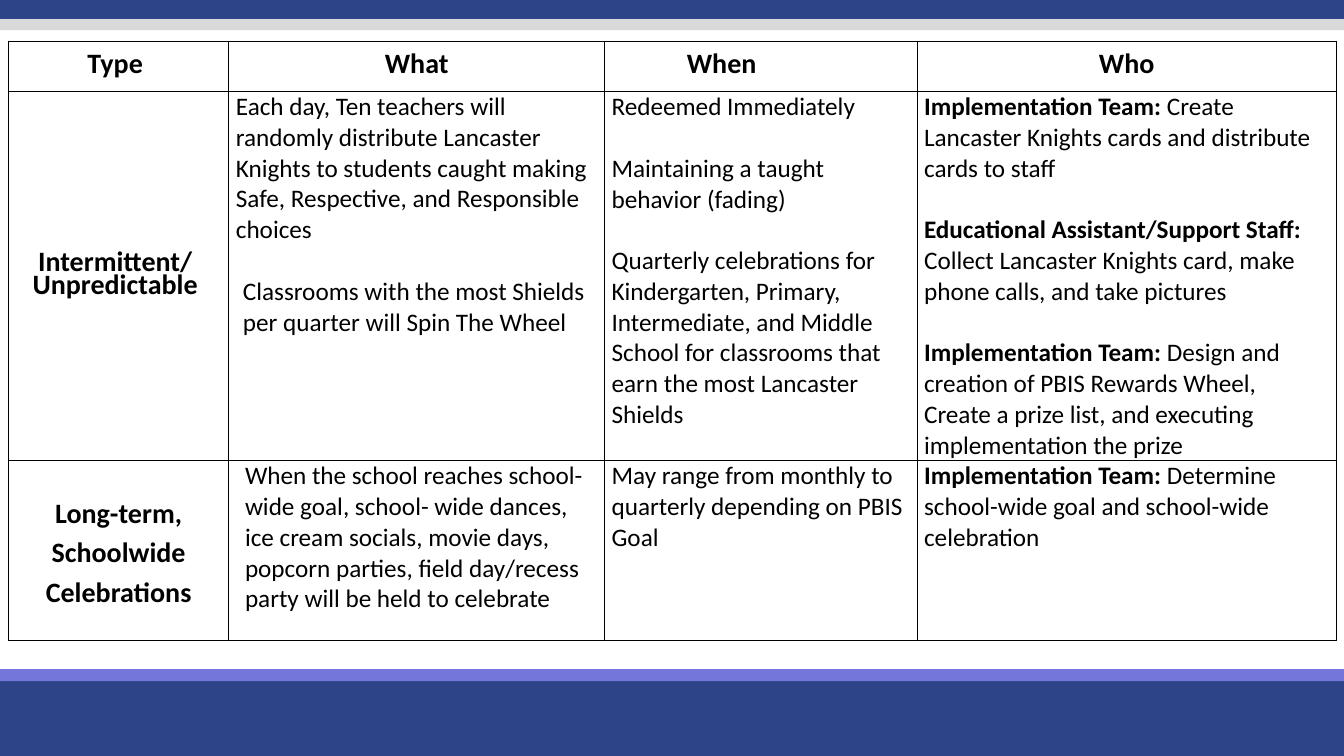
from lxml import etree
from pptx import Presentation
from pptx.dml.color import RGBColor
from pptx.enum.shapes import MSO_SHAPE
from pptx.enum.text import MSO_ANCHOR, PP_ALIGN
from pptx.oxml.ns import qn
from pptx.util import Pt

RECTANGLE = MSO_SHAPE.RECTANGLE
MIDDLE, TOP = MSO_ANCHOR.MIDDLE, MSO_ANCHOR.TOP
CENTER, LEFT = PP_ALIGN.CENTER, PP_ALIGN.LEFT
NAVY = RGBColor(0x2E, 0x44, 0x88)
VIOLET = RGBColor(0x74, 0x76, 0xDA)
GRAY = RGBColor(0xD9, 0xD9, 0xD9)
WHITE = RGBColor(0xFF, 0xFF, 0xFF)
BLACK = RGBColor(0, 0, 0)
FONT = "Calibri"
SLIDE_WIDTH, SLIDE_HEIGHT = 960, 540

BANDS = [(482.4, 57.6, NAVY), (478, 8.6, VIOLET), (-2.2, 15.9, NAVY), (13.7, 7.9, GRAY)]

TABLE_LEFT, TABLE_TOP = 6, 29.5
COLUMN_WIDTHS = [157.5, 268.4, 223.2, 299.4]
ROW_HEIGHTS = [36, 260, 128.2]
LINE_GAP = 22

# Heading cells: lines, left indent, right margin, line spacing
HEADINGS = {
    (0, 0): (["Type"], 0, 5, 0.66),
    (0, 1): (["What"], 5, 5, 0.66),
    (0, 2): (["When"], 0, 56, 0.66),
    (0, 3): (["Who"], 60, 60, 0.66),
    (1, 0): (["Intermittent/ Unpredictable"], 0, 5, 0.67),
    (2, 0): (["Long-term,", "Schoolwide", "Celebrations"], 12, 12, 1.15),
}

# Body cells: paragraphs of left indent, bold label, plain text
BODY = {
    (1, 1): [
        (5, "", "Each day, Ten teachers will randomly distribute Lancaster Knights to students "
                "caught making Safe, Respective, and Responsible choices"),
        (10, "", "Classrooms with the most Shields per quarter will Spin The Wheel"),
    ],
    (1, 2): [
        (5, "", "Redeemed Immediately"),
        (5, "", "Maintaining a taught behavior (fading)"),
        (5, "", "Quarterly celebrations for Kindergarten, Primary, Intermediate, and Middle "
                "School for classrooms that earn the most Lancaster Shields"),
    ],
    (1, 3): [
        (5, "Implementation Team: ", "Create Lancaster Knights cards and distribute cards to staff"),
        (5, "Educational Assistant/Support Staff: ",
         "Collect Lancaster Knights card, make phone calls, and take pictures"),
        (5, "Implementation Team: ", "Design and creation of PBIS Rewards Wheel, Create a prize "
                                     "list, and executing implementation the prize"),
    ],
    (2, 1): [
        (11.5, "", "When the school reaches school-wide goal, school- wide dances, ice cream "
                   "socials, movie days, popcorn parties, field day/recess party will be held "
                   "to celebrate"),
    ],
    (2, 2): [(5, "", "May range from monthly to quarterly depending on PBIS Goal")],
    (2, 3): [(5, "Implementation Team: ", "Determine school-wide goal and school-wide celebration")],
}
BODY_RIGHT_MARGINS = {1: 9, 2: 5, 3: 12}


def add_band(page, top, height, color):
    band = page.shapes.add_shape(RECTANGLE, 0, Pt(top), Pt(SLIDE_WIDTH), Pt(height))
    band.shadow.inherit = False
    band.fill.solid()
    band.fill.fore_color.rgb = color
    band.line.fill.background()


def style_cell(cell, anchor, right_margin):
    cell.margin_left = cell.margin_top = cell.margin_bottom = 0
    cell.margin_right = Pt(right_margin)
    cell.vertical_anchor = anchor
    properties = cell._tc.get_or_add_tcPr()
    for side in ("lnL", "lnR", "lnT", "lnB"):
        border = etree.SubElement(properties, qn("a:" + side), w=str(Pt(1)))
        fill = etree.SubElement(border, qn("a:solidFill"))
        etree.SubElement(fill, qn("a:srgbClr"), val=str(BLACK))
    cell.fill.solid()
    cell.fill.fore_color.rgb = WHITE


def write_cell(cell, paragraphs, size, align, spacing, gap):
    frame = cell.text_frame
    for index, (indent, label, text) in enumerate(paragraphs):
        para = frame.add_paragraph() if index else frame.paragraphs[0]
        para._p.get_or_add_pPr().set("marL", str(Pt(indent)))
        para.alignment = align
        para.line_spacing = spacing
        para.space_before = Pt(gap if index else 0)
        for words, bold in ((label, True), (text, False)):
            if words:
                span = para.add_run()
                span.text = words
                span.font.name = FONT
                span.font.size = Pt(size)
                span.font.bold = bold
                span.font.color.rgb = BLACK


def main():
    deck = Presentation()
    deck.slide_width, deck.slide_height = Pt(SLIDE_WIDTH), Pt(SLIDE_HEIGHT)
    page = deck.slides.add_slide(deck.slide_layouts[6])
    page.background.fill.solid()
    page.background.fill.fore_color.rgb = WHITE
    for band in BANDS:
        add_band(page, *band)

    table = page.shapes.add_table(
        len(ROW_HEIGHTS), len(COLUMN_WIDTHS), Pt(TABLE_LEFT), Pt(TABLE_TOP),
        Pt(sum(COLUMN_WIDTHS)), Pt(sum(ROW_HEIGHTS))).table
    table.first_row = table.horz_banding = False
    for column, width in zip(table.columns, COLUMN_WIDTHS):
        column.width = Pt(width)
    for row, height in zip(table.rows, ROW_HEIGHTS):
        row.height = Pt(height)

    for position, (lines, indent, right_margin, spacing) in HEADINGS.items():
        cell = table.cell(*position)
        style_cell(cell, MIDDLE, right_margin)
        write_cell(cell, [(indent, line, "") for line in lines], 20, CENTER, spacing, 0)
    for position, paragraphs in BODY.items():
        cell = table.cell(*position)
        style_cell(cell, TOP, BODY_RIGHT_MARGINS[position[1]])
        write_cell(cell, paragraphs, 18, LEFT, 1.0, LINE_GAP)

    deck.save("out.pptx")


if __name__ == "__main__":
    main()
